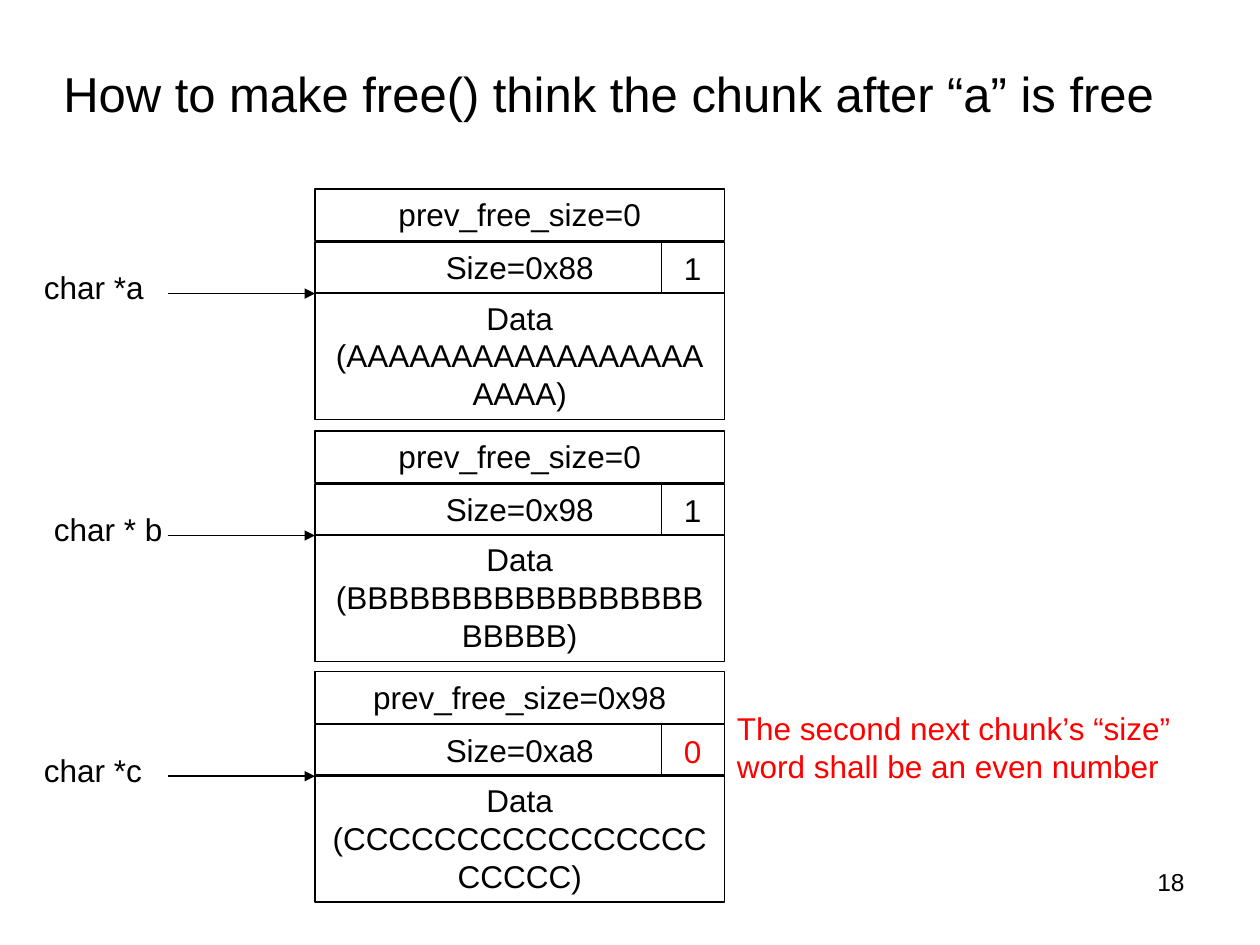
from lxml.etree import SubElement
from pptx import Presentation
from pptx.dml.color import RGBColor
from pptx.enum.shapes import MSO_CONNECTOR as Connector, MSO_SHAPE as Shape
from pptx.enum.text import MSO_ANCHOR as Anchor, PP_ALIGN as Align
from pptx.oxml.ns import qn
from pptx.util import Inches, Pt

COLORS = {"black": "000000", "red": "FF0000"}


def add_text(text, left, top, width, height, size=18, color="black",
             align=Align.LEFT, anchor=Anchor.TOP, boxed=False):
    bounds = [Inches(value) for value in (left, top, width, height)]
    if boxed:
        shape = slide.shapes.add_shape(Shape.RECTANGLE, *bounds)
        shape.shadow.inherit = False
        shape.fill.background()
        shape.line.color.rgb = RGBColor.from_string(COLORS["black"])
        shape.line.width = Pt(0.75)
    else:
        shape = slide.shapes.add_textbox(*bounds)
    frame = shape.text_frame
    for name, value in {"word_wrap": True, "vertical_anchor": anchor}.items():
        setattr(frame, name, value)
    paragraph = frame.paragraphs[0]
    paragraph.alignment = align
    run = paragraph.add_run()
    run.text = text
    for name, value in {"name": "Arial", "size": Pt(size)}.items():
        setattr(run.font, name, value)
    run.font.color.rgb = RGBColor.from_string(COLORS[color])


def add_line(left, top, right, bottom, arrow=False):
    ends = [Inches(value) for value in (left, top, right, bottom)]
    connector = slide.shapes.add_connector(Connector.STRAIGHT, *ends)
    connector.line.color.rgb = RGBColor.from_string(COLORS["black"])
    connector.line.width = Pt(0.75)
    if arrow:
        SubElement(connector.line._get_or_add_ln(), qn("a:tailEnd"), type="triangle")
    SubElement(connector._element.spPr, qn("a:effectLst"))


presentation = Presentation()
presentation.slide_width = Inches(10)
presentation.slide_height = Inches(7.5)
slide = presentation.slides.add_slide(presentation.slide_layouts[6])

add_text("How to make free() think the chunk after “a” is free", 0.33, 0.3, 9, 0.87,
         size=28, align=Align.CENTER, anchor=Anchor.MIDDLE)

chunk_left, chunk_width = 2.5, 3.25
flag_left = 5.25
chunks = [
    (1.5, "prev_free_size=0", "Size=0x88", "1", "black", "A" * 21, "char *a", 0.25),
    (3.42, "prev_free_size=0", "Size=0x98", "1", "black", "B" * 22, "char * b", 0.33),
    (5.33, "prev_free_size=0x98", "Size=0xa8", "0", "red", "C" * 21, "char *c", 0.25),
]

for top, previous, size_word, flag, flag_color, data, pointer, pointer_left in chunks:
    size_top = top + 0.42
    data_top = top + 0.83
    fields = [
        (previous, top, 0.41),
        (size_word, size_top, 0.41),
        (f"Data ({data})", data_top - 0.01, 1.01),
    ]
    for text, field_top, height in fields:
        add_text(text, chunk_left, field_top, chunk_width, height,
                 align=Align.CENTER, boxed=True)
    add_line(flag_left, size_top, flag_left, data_top)
    add_text(flag, 5.33, top + 0.43, 0.5, 0.4, color=flag_color)
    add_text(pointer, pointer_left, top + 0.58, 1.08, 0.4)
    add_line(1.33, data_top, chunk_left, data_top, arrow=True)

add_text("The second next chunk’s “size” word shall be an even number",
         5.75, 5.58, 3.92, 0.71, color="red")
add_text("18", 7.17, 6.83, 2.33, 0.52, size=14, align=Align.RIGHT)

presentation.save("out.pptx")
